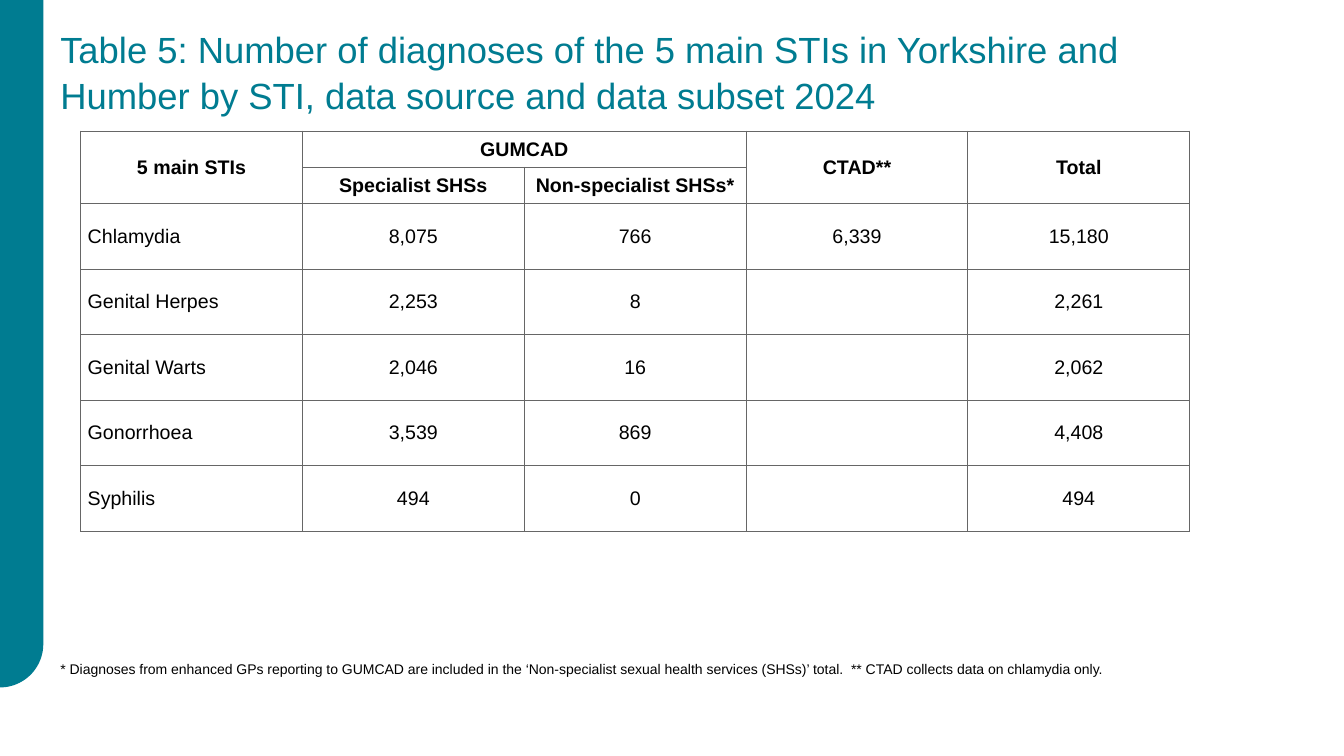
import math

from lxml import etree
from pptx import Presentation
from pptx.dml.color import RGBColor
from pptx.enum.text import MSO_ANCHOR, PP_ALIGN
from pptx.oxml.ns import qn
from pptx.util import Emu, Pt

LEFT, CENTER = PP_ALIGN.LEFT, PP_ALIGN.CENTER
MIDDLE = MSO_ANCHOR.MIDDLE

TITLE = ("Table 5: Number of diagnoses of the 5 main STIs in Yorkshire and "
         "Humber by STI, data source and data subset 2024")
FOOTNOTE = ("* Diagnoses from enhanced GPs reporting to GUMCAD are included in the "
            "‘Non-specialist sexual health services (SHSs)’ total.  "
            "** CTAD collects data on chlamydia only.")
HEADER = [
    ["5 main STIs", "GUMCAD", "", "CTAD**", "Total"],
    ["", "Specialist SHSs", "Non-specialist SHSs*", "", ""],
]
DIAGNOSES = [
    ["Chlamydia", "8,075", "766", "6,339", "15,180"],
    ["Genital Herpes", "2,253", "8", "", "2,261"],
    ["Genital Warts", "2,046", "16", "", "2,062"],
    ["Gonorrhoea", "3,539", "869", "", "4,408"],
    ["Syphilis", "494", "0", "", "494"],
]
# First and last cell of each merged block, as (row, column)
MERGES = [((0, 0), (1, 0)), ((0, 1), (0, 2)), ((0, 3), (1, 3)), ((0, 4), (1, 4))]

COLORS = {"teal": "007C91", "text": "000000", "border": "666666"}
FONT = "Arial"
PX = 9144  # 100 px to the inch
PAGE_WIDTH, PAGE_HEIGHT = 1333, 750
BAND_WIDTH, BAND_HEIGHT = 43, 682
TABLE_LEFT, TABLE_TOP = 80, 130
COLUMN_WIDTH, HEADER_HEIGHT, BODY_HEIGHT = 220, 36, 65
CELL_MARGIN = 7
ARC_STEPS = 24


def px(length):
    return Emu(round(length * PX))


def color(name):
    return RGBColor.from_string(COLORS[name])


def style_font(font, size, color_name, bold=False):
    font.name, font.size, font.bold = FONT, Pt(size), bold
    font.color.rgb = color(color_name)


def add_text(page, text, top, height, size, color_name, spacing=1.0):
    box = page.shapes.add_textbox(px(50), px(top), px(1200), px(height))
    box.text_frame.word_wrap = True
    box.text_frame.text = text
    para = box.text_frame.paragraphs[0]
    para.line_spacing = spacing
    style_font(para.runs[0].font, size, color_name)


def add_band(page):
    """Draw the side band, whose lower right corner is a quarter circle."""
    arc_top = BAND_HEIGHT - BAND_WIDTH
    angles = [math.pi / 2 * step / ARC_STEPS for step in range(ARC_STEPS + 1)]
    arc = [(BAND_WIDTH * math.cos(angle), arc_top + BAND_WIDTH * math.sin(angle))
           for angle in angles]
    builder = page.shapes.build_freeform(0, 0, scale=1.0)
    builder.add_line_segments([(px(x), px(y)) for x, y in [(BAND_WIDTH, 0)] + arc])
    band = builder.convert_to_shape()
    band.shadow.inherit = False
    band.fill.solid()
    band.fill.fore_color.rgb = color("teal")
    band.line.fill.background()


def add_borders(cell):
    properties = cell._tc.get_or_add_tcPr()
    for index, side in enumerate(("lnL", "lnR", "lnT", "lnB")):
        line = etree.Element(qn("a:" + side), w=str(Pt(0.75)))
        fill = etree.SubElement(line, qn("a:solidFill"))
        etree.SubElement(fill, qn("a:srgbClr"), val=COLORS["border"])
        properties.insert(index, line)


def fill_cell(cell, text, bold, alignment):
    cell.fill.background()
    add_borders(cell)
    cell.vertical_anchor = MIDDLE
    cell.margin_left = cell.margin_right = px(CELL_MARGIN)
    cell.margin_top = cell.margin_bottom = 0
    cell.text_frame.text = text
    para = cell.text_frame.paragraphs[0]
    para.alignment = alignment
    style_font(para.font, 14, "text", bold)
    for span in para.runs:
        style_font(span.font, 14, "text", bold)


def add_diagnoses_table(page):
    rows = HEADER + DIAGNOSES
    heights = [HEADER_HEIGHT] * len(HEADER) + [BODY_HEIGHT] * len(DIAGNOSES)
    columns = len(rows[0])
    table = page.shapes.add_table(
        len(rows), columns, px(TABLE_LEFT), px(TABLE_TOP),
        px(COLUMN_WIDTH * columns), px(sum(heights))).table
    table.first_row = table.horz_banding = False
    for column in table.columns:
        column.width = px(COLUMN_WIDTH)
    for row_index, (values, height) in enumerate(zip(rows, heights)):
        table.rows[row_index].height = px(height)
        is_header = row_index < len(HEADER)
        for column_index, value in enumerate(values):
            alignment = CENTER if is_header or column_index else LEFT
            fill_cell(table.cell(row_index, column_index), value, is_header, alignment)
    for first, last in MERGES:
        table.cell(*first).merge(table.cell(*last))


def main():
    deck = Presentation()
    deck.slide_width, deck.slide_height = px(PAGE_WIDTH), px(PAGE_HEIGHT)
    page = deck.slides.add_slide(deck.slide_layouts[6])
    add_band(page)
    add_text(page, FOOTNOTE, 650, 30, 10, "text")
    add_text(page, TITLE, 20, 46, 26, "teal", spacing=1.05)
    add_diagnoses_table(page)
    deck.save("out.pptx")


if __name__ == "__main__":
    main()
